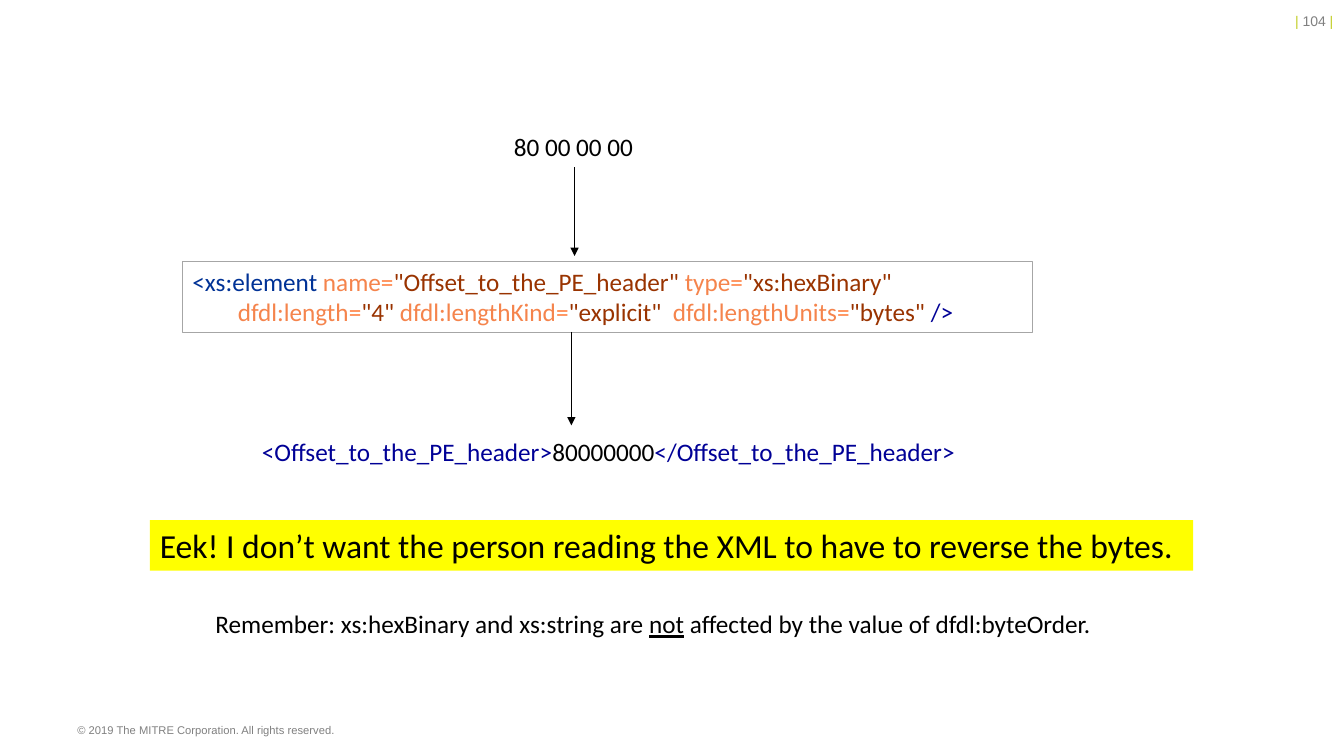
import dataclasses
import typing

import lxml.etree
import pptx
import pptx.dml.color
import pptx.enum.dml
import pptx.enum.shapes
import pptx.enum.text
import pptx.oxml.ns
import pptx.slide
import pptx.util

Cm = pptx.util.Cm
Pt = pptx.util.Pt


@dataclasses.dataclass(frozen=True)
class Theme:
    sans: str = "Calibri"
    edge: str = "Arial"
    ink: str = "000000"
    gray: str = "808080"
    lime: str = "C1CD23"
    rule: str = "A6A6A6"
    glow: str = "FFFF00"
    open: str = "003296"
    tag: str = "000096"
    attr: str = "F5844C"
    sign: str = "FF8040"
    value: str = "993300"
    big: int = 24
    text: int = 18
    page: int = 10
    foot: int = 8


THEME = Theme()


class Part(typing.NamedTuple):
    text: str
    color: str = THEME.ink
    under: bool = False


@dataclasses.dataclass(frozen=True)
class Label:
    left: float
    top: float
    width: float
    height: float
    lines: list[list[Part]]
    size: int = THEME.text
    font: str = THEME.sans
    fill: str | None = None
    line: str | None = None
    right: bool = False


class Arrow(typing.NamedTuple):
    x: float
    top: float
    end: float


def attr(name: str, value: str) -> list[Part]:
    return [Part(name, THEME.attr), Part("=", THEME.sign), Part(f'"{value}"', THEME.value)]


CODE = [
    [
        Part("<xs:element", THEME.open),
        *attr(" name", "Offset_to_the_PE_header"),
        *attr(" type", "xs:hexBinary"),
    ],
    [
        *attr("        dfdl:length", "4"),
        *attr(" dfdl:lengthKind", "explicit"),
        *attr("  dfdl:lengthUnits", "bytes"),
        Part(" />", THEME.tag),
    ],
]
RESULT = [
    Part("<Offset_to_the_PE_header>", THEME.tag),
    Part("80000000"),
    Part("</Offset_to_the_PE_header>", THEME.tag),
]
EEK = "Eek! I don’t want the person reading the XML to have to reverse the bytes."
NOTE = [
    Part("Remember: xs:hexBinary and xs:string are "),
    Part("not", under=True),
    Part(" affected by the value of dfdl:byteOrder."),
]
PAGE = [Part("| ", THEME.lime), Part("104 ", THEME.gray), Part("|", THEME.lime)]
RIGHTS = "© 2019 The MITRE Corporation. All rights reserved."

LABELS = [
    Label(27.91, 0.18, 5.94, 0.69, [PAGE], THEME.page, THEME.edge, right=True),
    Label(12.7, 3.18, 3.56, 1.02, [[Part("80 00 00 00")]]),
    Label(4.6, 6.58, 21.41, 1.8, CODE, line=THEME.rule),
    Label(6.35, 10.87, 18.44, 1.02, [RESULT]),
    Label(3.78, 13.11, 26.29, 1.27, [[Part(EEK)]], THEME.big, fill=THEME.glow),
    Label(5.18, 15.21, 24.51, 1.02, [NOTE]),
    Label(1.7, 18.11, 20.93, 0.66, [[Part(RIGHTS, THEME.gray)]], THEME.foot, THEME.edge),
]
ARROWS = [Arrow(14.48, 4.22, 6.45), Arrow(14.4, 8.36, 10.72)]


def paint(color: pptx.dml.color.ColorFormat, code: str) -> None:
    color.rgb = pptx.dml.color.RGBColor.from_string(code)


def draw_label(slide: pptx.slide.Slide, label: Label) -> None:
    box = slide.shapes.add_textbox(
        Cm(label.left), Cm(label.top), Cm(label.width), Cm(label.height)
    )
    if label.fill:
        box.fill.solid()
        paint(box.fill.fore_color, label.fill)
    if label.line:
        paint(box.line.color, label.line)
        box.line.width = Pt(0.75)
    box.text_frame.word_wrap = True
    para = box.text_frame.paragraphs[0]
    if label.right:
        para.alignment = pptx.enum.text.PP_ALIGN.RIGHT
    para.font.name = label.font
    para.font.size = Pt(label.size)
    colors = {part.color for line in label.lines for part in line}
    same = len(colors) == 1
    if same:
        paint(para.font.color, colors.pop())
    for index, line in enumerate(label.lines):
        if index:
            para.add_line_break()
        for part in line:
            run = para.add_run()
            run.text = part.text
            if not same:
                paint(run.font.color, part.color)
            if part.under:
                run.font.underline = True


def draw_arrow(slide: pptx.slide.Slide, arrow: Arrow) -> None:
    link = slide.shapes.add_connector(
        pptx.enum.shapes.MSO_CONNECTOR.STRAIGHT,
        Cm(arrow.x), Cm(arrow.top), Cm(arrow.x), Cm(arrow.end),
    )
    paint(link.line.color, THEME.ink)
    link.line.width = Pt(0.5)
    qn = pptx.oxml.ns.qn
    props = link.element.spPr
    lxml.etree.SubElement(props.find(qn("a:ln")), qn("a:tailEnd"), type="triangle")
    lxml.etree.SubElement(props, qn("a:effectLst"))


def main() -> None:
    deck = pptx.Presentation()
    deck.slide_width = Cm(33.87)
    deck.slide_height = Cm(19.05)
    slide = deck.slides.add_slide(deck.slide_layouts[6])
    for label in LABELS:
        draw_label(slide, label)
    for arrow in ARROWS:
        draw_arrow(slide, arrow)
    deck.save("out.pptx")


if __name__ == "__main__":
    main()
